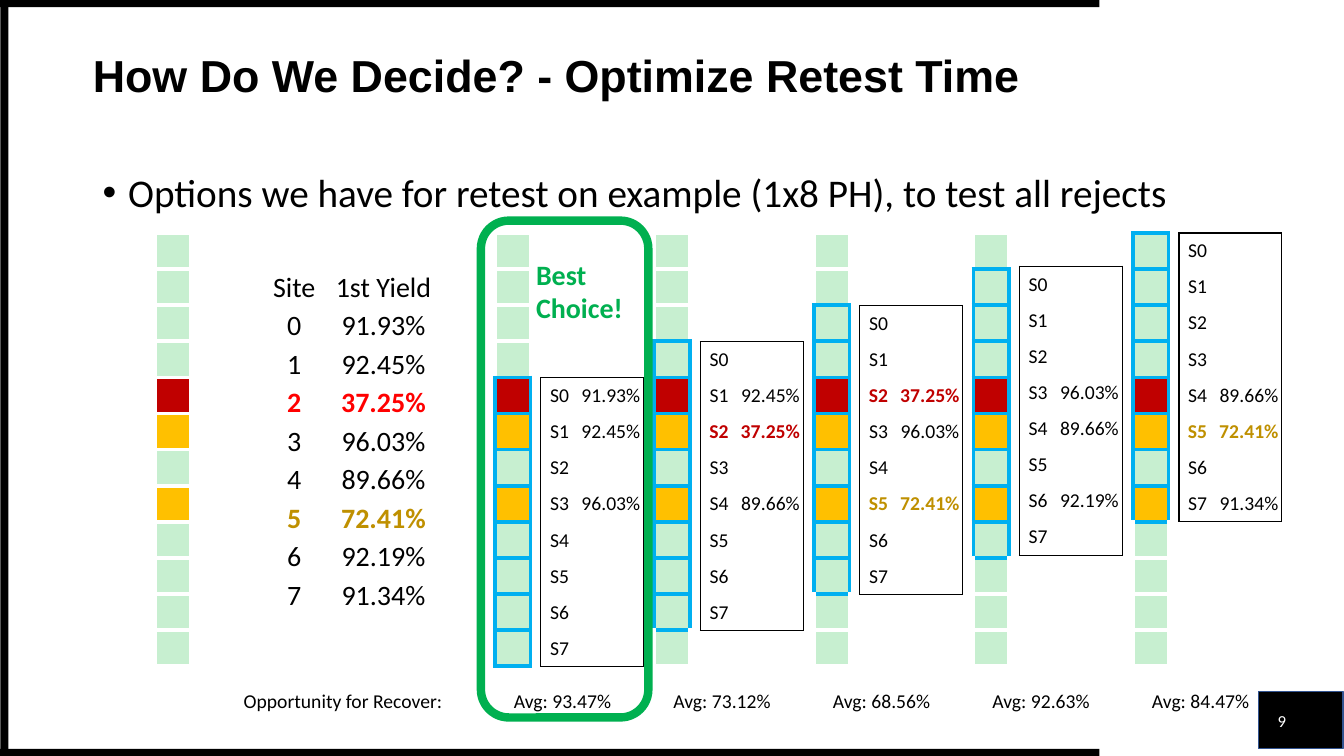
"""Build the slide that compares retest options for a 1x8 probe head."""
from dataclasses import dataclass
from typing import Any

from lxml.etree import SubElement
from pptx import Presentation
from pptx.dml.color import RGBColor
from pptx.enum.shapes import MSO_SHAPE
from pptx.enum.text import MSO_ANCHOR, PP_ALIGN
from pptx.oxml.ns import qn
from pptx.util import Cm, Pt

BLACK, WHITE, GREEN = "000000", "FFFFFF", "00B050"
PASS_FILL, RED, AMBER, WINDOW_BLUE = "C7EFD0", "C00000", "FFC000", "00B0F0"
GOLD = "BF9000"
PLAIN_TABLE = "{2D5ABB26-0587-4C30-8999-92F81FD0307C}"
YIELDS = [91.93, 92.45, 37.25, 96.03, 89.66, 72.41, 92.19, 91.34]
DIE_COUNT, SITE_COUNT = 12, len(YIELDS)
REJECTS = {4: RED, 5: AMBER, 7: AMBER}
ROW_HEIGHT, STRIP_TOP, STRIP_WIDTH = 0.91, 5.87, 0.9
FIRST_STRIP, FIRST_MAP, OPTION_PITCH = 12.47, 13.63, 4.02


@dataclass
class Box:
    left: float
    top: float
    width: float
    height: float

    def lengths(self) -> tuple:
        return Cm(self.left), Cm(self.top), Cm(self.width), Cm(self.height)


@dataclass
class Label:
    box: Box
    lines: list[str]
    size: float
    color: str = BLACK
    bold: bool = False
    font: str = "Calibri"
    inset: float = 0.25
    anchor: Any = MSO_ANCHOR.TOP
    spacing: float = 1.0
    bullet: bool = False


@dataclass
class RetestOption:
    first_die: int
    map_top: float


LABELS = [
    Label(Box(2.34, 1.02, 29.21, 1.9), ["How Do We Decide? - Optimize Retest Time"], 32,
          bold=True, font="Arial", inset=0, anchor=MSO_ANCHOR.MIDDLE, spacing=0.9),
    Label(Box(31.95, 17.65, 1.27, 1.02), ["9"], 12, WHITE, anchor=MSO_ANCHOR.MIDDLE),
    Label(Box(2.34, 4.24, 29.21, 1.3),
          ["Options we have for retest on example (1x8 PH), to test all rejects"], 28,
          spacing=0.9, bullet=True),
    Label(Box(5.89, 17.22, 5.56, 0.86), ["Opportunity for Recover:"], 14),
]
BEST_CHOICE = Label(Box(13.26, 6.35, 2.72, 1.96), ["Best", "Choice!"], 20, GREEN, True)
FRAME_BARS = [Box(0, 18.87, 27.71, 0.18), Box(0, 0, 27.71, 0.18), Box(0.01, 0.09, 0.2, 18.96)]
OPTIONS = [RetestOption(4, 9.52), RetestOption(3, 8.61), RetestOption(2, 7.7),
           RetestOption(1, 6.71), RetestOption(0, 5.87)]


def rgb(color: str) -> RGBColor:
    return RGBColor.from_string(color)


def apply(target: Any, formats: dict[str, Any]) -> None:
    for name, value in formats.items():
        setattr(target, name, value)


def write(paragraph: Any, text: str, size: float, color: str = BLACK, bold: bool = False,
          font: str = "Calibri") -> None:
    run = paragraph.add_run()
    run.text = text
    apply(run.font, {"size": Pt(size), "bold": bold, "name": font})
    run.font.color.rgb = rgb(color)


def add_label(slide: Any, label: Label) -> None:
    frame = slide.shapes.add_textbox(*label.box.lengths()).text_frame
    edge = Cm(0.13 if label.inset else 0)
    apply(frame, {"word_wrap": True, "vertical_anchor": label.anchor,
                  "margin_left": Cm(label.inset), "margin_right": Cm(0),
                  "margin_top": edge, "margin_bottom": edge})
    for index, line in enumerate(label.lines):
        paragraph = frame.add_paragraph() if index else frame.paragraphs[0]
        paragraph.line_spacing = label.spacing
        if label.bullet:
            properties = paragraph._p.get_or_add_pPr()
            apply_indent = {"marL": str(Cm(0.64)), "indent": str(-Cm(0.64))}
            properties.attrib.update(apply_indent)
            SubElement(properties, qn("a:buFont"), typeface="Arial")
            SubElement(properties, qn("a:buChar"), char="•")
        write(paragraph, line, label.size, label.color, label.bold, label.font)


def add_block(slide: Any, box: Box, preset: Any = MSO_SHAPE.RECTANGLE, fill: str = BLACK,
              line: str = "", weight: float = 1) -> None:
    block = slide.shapes.add_shape(preset, *box.lengths())
    block.shadow.inherit = False
    if fill:
        block.fill.solid()
        block.fill.fore_color.rgb = rgb(fill)
    else:
        block.fill.background()
    if line:
        block.line.color.rgb = rgb(line)
        block.line.width = Pt(weight)
    else:
        block.line.fill.background()


def add_grid(slide: Any, left: float, top: float, widths: list[float], rows: int,
             row_height: float) -> Any:
    box = Box(left, top, sum(widths), rows * row_height)
    grid = slide.shapes.add_table(rows, len(widths), *box.lengths()).table
    apply(grid, {"first_row": False, "horz_banding": False})
    grid._tbl.tblPr.find(qn("a:tableStyleId")).text = PLAIN_TABLE
    for column, width in zip(grid.columns, widths):
        column.width = Cm(width)
    for row in grid.rows:
        row.height = Cm(row_height)
    for cell in grid.iter_cells():
        apply(cell, {"margin_left": 0, "margin_right": 0, "margin_top": 0,
                     "margin_bottom": 0, "vertical_anchor": MSO_ANCHOR.MIDDLE})
        cell.text_frame.paragraphs[0].alignment = PP_ALIGN.CENTER
    return grid


def set_borders(cell: Any, colors: dict[str, str], weight: float) -> None:
    properties = cell._tc.get_or_add_tcPr()
    for side in "LRTB":
        if side in colors:
            border = SubElement(properties, qn(f"a:ln{side}"), w=str(Pt(weight)))
            SubElement(SubElement(border, qn("a:solidFill")), qn("a:srgbClr"), val=colors[side])


def add_strip(slide: Any, left: float, window: range) -> None:
    grid = add_grid(slide, left, STRIP_TOP, [STRIP_WIDTH], DIE_COUNT, ROW_HEIGHT)
    for die, cell in enumerate(grid.iter_cells()):
        touching = {"L": [die], "R": [die], "T": [die - 1, die], "B": [die, die + 1]}
        set_borders(cell, {side: WINDOW_BLUE if any(near in window for near in dies) else WHITE
                           for side, dies in touching.items()}, 3)
        cell.fill.solid()
        cell.fill.fore_color.rgb = rgb(REJECTS.get(die, PASS_FILL))


def add_yields(slide: Any) -> None:
    grid = add_grid(slide, 6.6, 6.71, [1.63, 2.87], SITE_COUNT + 1, 0.97)
    entries = [("Site", "1st Yield")]
    entries += [(str(site), f"{value:.2f}%") for site, value in enumerate(YIELDS)]
    accents = {"2": "FF0000", "5": GOLD}
    for row, entry in enumerate(entries):
        for column, text in enumerate(entry):
            cell = grid.cell(row, column)
            cell.vertical_anchor = MSO_ANCHOR.BOTTOM
            write(cell.text_frame.paragraphs[0], text, 20, accents.get(entry[0], BLACK),
                  entry[0] in accents)


def add_site_map(slide: Any, left: float, top: float, retested: list[int]) -> None:
    grid = add_grid(slide, left, top, [0.94, 1.65], SITE_COUNT, ROW_HEIGHT)
    accents = {site: color for site, color in {2: RED, 5: GOLD}.items() if site in retested}
    for site, value in enumerate(YIELDS):
        for column, text in enumerate((f"S{site}", f"{value:.2f}%")):
            cell = grid.cell(site, column)
            outer = {"L": column == 0, "R": column == 1, "T": site == 0,
                     "B": site == SITE_COUNT - 1}
            set_borders(cell, {side: BLACK for side, shown in outer.items() if shown}, 1)
            if column == 0 or site in retested:
                write(cell.text_frame.paragraphs[0], text, 14, accents.get(site, BLACK),
                      site in accents)


def add_option(slide: Any, index: int, option: RetestOption) -> None:
    shift = index * OPTION_PITCH
    window = range(option.first_die, option.first_die + SITE_COUNT)
    retested = [die - option.first_die for die in REJECTS]
    average = sum(YIELDS[site] for site in retested) / len(retested)
    add_strip(slide, FIRST_STRIP + shift, window)
    add_site_map(slide, FIRST_MAP + shift, option.map_top, retested)
    add_label(slide, Label(Box(FIRST_STRIP + shift, 17.22, 3.23, 0.86),
                           [f"Avg: {average:.2f}%"], 14, inset=0.48))


def main() -> None:
    deck = Presentation()
    apply(deck, {"slide_width": Cm(33.87), "slide_height": Cm(19.05)})
    slide = deck.slides.add_slide(deck.slide_layouts[6])
    add_block(slide, Box(31.72, 17.42, 2.13, 1.45), line="325491")
    for bar in FRAME_BARS:
        add_block(slide, bar)
    for label in LABELS:
        add_label(slide, label)
    add_yields(slide)
    add_strip(slide, 3.91, range(0))
    for index, option in enumerate(OPTIONS):
        add_option(slide, index, option)
    add_block(slide, Box(12.12, 5.56, 4.22, 12.52), MSO_SHAPE.ROUNDED_RECTANGLE, "", GREEN, 6)
    add_label(slide, BEST_CHOICE)
    deck.save("out.pptx")


if __name__ == "__main__":
    main()
